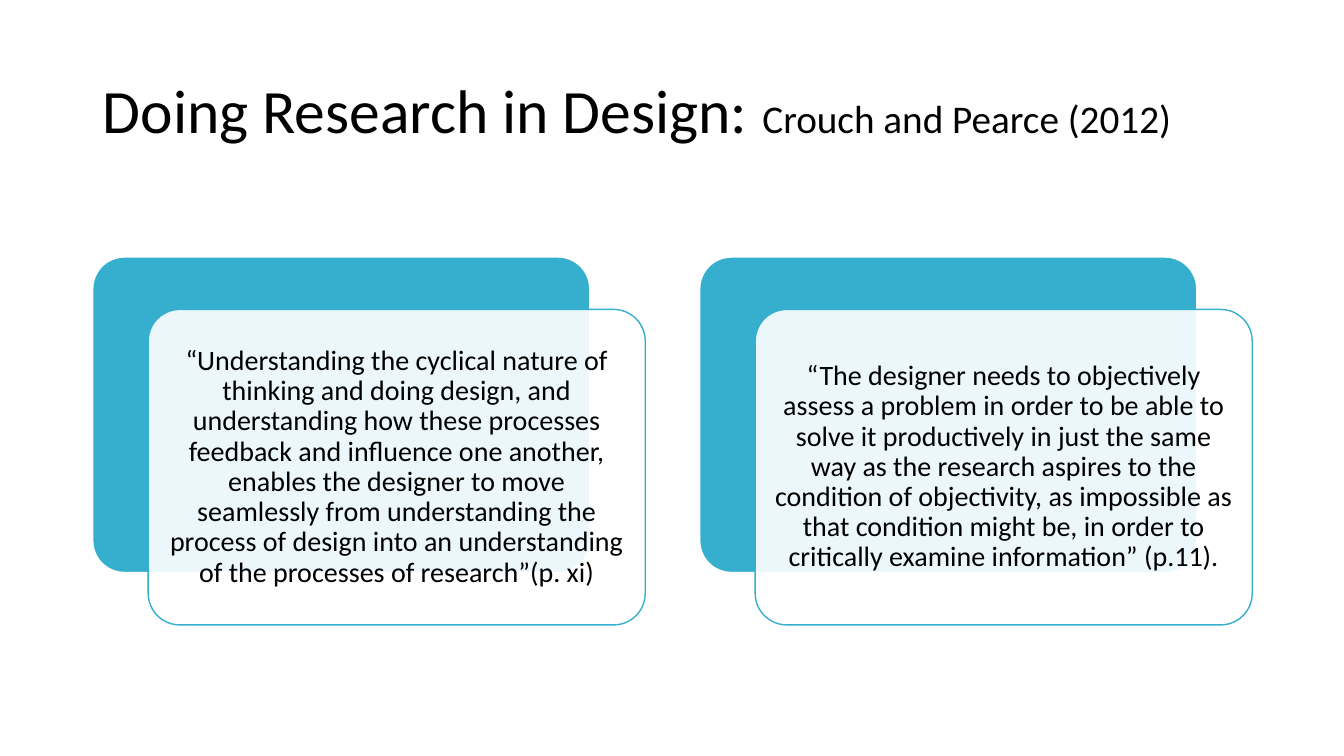
from pptx import Presentation
from pptx.dml.color import RGBColor
from pptx.enum.shapes import MSO_SHAPE as Shape
from pptx.enum.text import MSO_ANCHOR as Anchor, PP_ALIGN as Align
from pptx.oxml.ns import qn
from pptx.util import Inches, Pt
from lxml.etree import SubElement

# Content
TITLE = [("Doing Research in Design: ", 44), ("Crouch and Pearce (2012)", 28)]
QUOTES = [
    "“Understanding the cyclical nature of thinking and doing design, and "
    "understanding how these processes feedback and influence one another, "
    "enables the designer to move seamlessly from understanding the process "
    "of design into an understanding of the processes of research”(p. xi)",
    "“The designer needs to objectively assess a problem in order to be able "
    "to solve it productively in just the same way as the research aspires to "
    "the condition of objectivity, as impossible as that condition might be, "
    "in order to critically examine information” (p.11).",
]
FONT, BLACK, WHITE, TEAL = "Calibri", "000000", "FFFFFF", "36AFCE"

# Grid, in inches
WIDE, HIGH = 13.33, 7.5
LEFT, TOP = 0.92, 2.55
CARD_W, CARD_H = 4.93, 3.13
STEP = 6.02             # from one pair of cards to the next
DX, DY = 0.55, 0.52     # front card against back card

deck = Presentation()
deck.slide_width, deck.slide_height = Inches(WIDE), Inches(HIGH)
slide = deck.slides.add_slide(deck.slide_layouts[6])


def color(code):
    return RGBColor.from_string(code)


def style(para):
    para.line_spacing = 0.9
    para.font.name = FONT
    para.font.color.rgb = color(BLACK)


def add_card(x, y, fill, line):
    card = slide.shapes.add_shape(
        Shape.ROUNDED_RECTANGLE, *map(Inches, (x, y, CARD_W, CARD_H)))
    card.adjustments[0] = 0.1
    card.shadow.inherit = False
    card.fill.solid()
    card.fill.fore_color.rgb = color(fill)
    card.line.color.rgb = color(line)
    card.line.width = Pt(1)
    return card


def fade(card, share):
    tint = card.fill._xPr.find(qn("a:solidFill"))[0]
    SubElement(tint, qn("a:alpha")).set("val", str(share * 1000))


# Title
box = slide.shapes.add_textbox(
    *map(Inches, (LEFT, 0.4, WIDE - 2 * LEFT, 1.45)))
frame = box.text_frame
frame.word_wrap = True
frame.vertical_anchor = Anchor.MIDDLE
head = frame.paragraphs[0]
style(head)
for text, size in TITLE:
    run = head.add_run()
    run.text = text
    run.font.size = Pt(size)

# Quote cards, each over a teal one
for col, quote in enumerate(QUOTES):
    x = LEFT + col * STEP
    add_card(x, TOP, TEAL, WHITE)
    front = add_card(x + DX, TOP + DY, WHITE, TEAL)
    fade(front, 90)
    frame = front.text_frame
    frame.word_wrap = True
    frame.vertical_anchor = Anchor.MIDDLE
    frame.margin_left = frame.margin_right = Inches(0.08)
    frame.margin_top = frame.margin_bottom = Inches(0.08)
    para = frame.paragraphs[0]
    para.text = quote
    para.alignment = Align.CENTER
    style(para)
    para.font.size = Pt(20)

deck.save("out.pptx")
